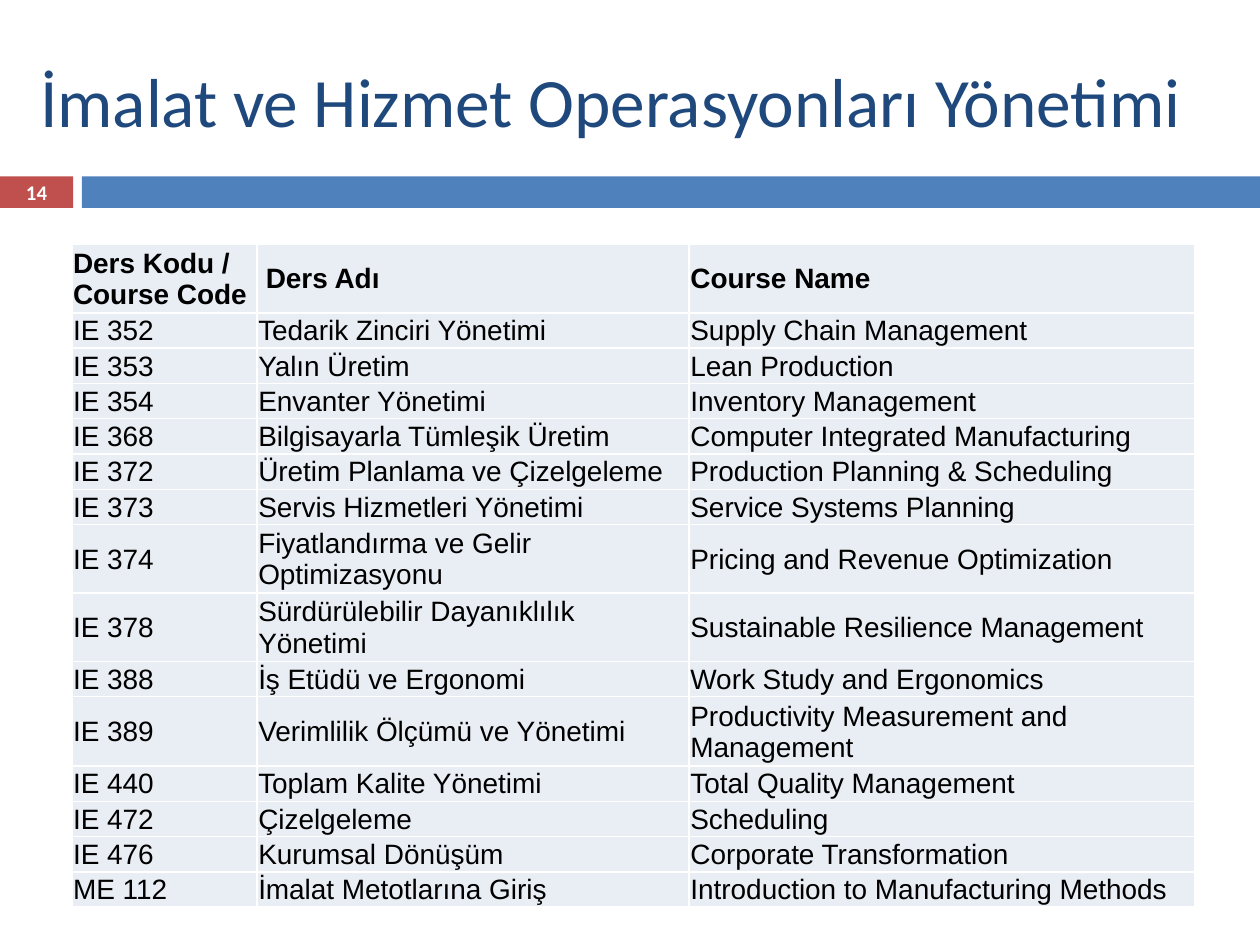
from lxml import etree
from pptx import Presentation, util as u
from pptx.dml.color import RGBColor
from pptx.enum import shapes, text
from pptx.oxml.ns import qn

TITLE = "İmalat ve Hizmet Operasyonları Yönetimi"
PAGE_NUMBER = "14"
HEADER = ("Ders Kodu / Course Code", "Ders Adı", "Course Name")
COURSES = [
    ("IE 352", "Tedarik Zinciri Yönetimi", "Supply Chain Management"),
    ("IE 353", "Yalın Üretim", "Lean Production"),
    ("IE 354", "Envanter Yönetimi", "Inventory Management"),
    ("IE 368", "Bilgisayarla Tümleşik Üretim", "Computer Integrated Manufacturing"),
    ("IE 372", "Üretim Planlama ve Çizelgeleme", "Production Planning & Scheduling"),
    ("IE 373", "Servis Hizmetleri Yönetimi", "Service Systems Planning"),
    ("IE 374", "Fiyatlandırma ve Gelir Optimizasyonu", "Pricing and Revenue Optimization"),
    ("IE 378", "Sürdürülebilir Dayanıklılık Yönetimi", "Sustainable Resilience Management"),
    ("IE 388", "İş Etüdü ve Ergonomi", "Work Study and Ergonomics"),
    ("IE 389", "Verimlilik Ölçümü ve Yönetimi", "Productivity Measurement and Management"),
    ("IE 440", "Toplam Kalite Yönetimi", "Total Quality Management"),
    ("IE 472", "Çizelgeleme", "Scheduling"),
    ("IE 476", "Kurumsal Dönüşüm", "Corporate Transformation"),
    ("ME 112", "İmalat Metotlarına Giriş", "Introduction to Manufacturing Methods"),
]
COLUMN_WIDTHS = (1.47, 3.43, 4.01)
ROW_HEIGHT = 0.28
TALL_ROWS = {0: 0.51, 7: 0.5, 8: 0.5, 10: 0.55}  # rows whose text takes two lines
WIDTH, HEIGHT = 10, 7.5
BAR_TOP, BAR_HEIGHT, BADGE_WIDTH, BAR_LEFT = 1.4, 0.25, 0.58, 0.65


def color(value):
    return RGBColor.from_string(value)


def style(paragraph, font_name, size, font_color, bold=False):
    font = paragraph.font
    font.name, font.size, font.bold = font_name, u.Pt(size), bold
    font.color.rgb = color(font_color)


def add_bar(slide, left, width, fill):
    bar = slide.shapes.add_shape(
        shapes.MSO_SHAPE.RECTANGLE, *map(u.Inches, (left, BAR_TOP, width, BAR_HEIGHT)))
    bar.shadow.inherit = False
    bar.fill.solid()
    bar.fill.fore_color.rgb = color(fill)
    bar.line.fill.background()
    return bar


def add_borders(cell, line_color, points):
    properties = cell._tc.get_or_add_tcPr()
    for position, side in enumerate(("a:lnL", "a:lnR", "a:lnT", "a:lnB")):
        line = etree.Element(qn(side), w=str(u.Pt(points)))
        fill = etree.SubElement(line, qn("a:solidFill"))
        etree.SubElement(fill, qn("a:srgbClr"), val=line_color)
        properties.insert(position, line)


presentation = Presentation()
presentation.slide_width, presentation.slide_height = u.Inches(WIDTH), u.Inches(HEIGHT)
slide = presentation.slides.add_slide(presentation.slide_layouts[6])

# Page number badge and divider bar
badge = add_bar(slide, 0, BADGE_WIDTH, "C0504D")
add_bar(slide, BAR_LEFT, WIDTH - BAR_LEFT, "4F81BD")
frame = badge.text_frame
frame.margin_top = frame.margin_bottom = 0
frame.vertical_anchor = text.MSO_ANCHOR.MIDDLE
frame.text = PAGE_NUMBER
frame.paragraphs[0].alignment = text.PP_ALIGN.CENTER
style(frame.paragraphs[0], "Calibri", 11.9, "FFFFFF", bold=True)

# Title
title = slide.shapes.add_textbox(*map(u.Inches, (0.22, 0.25, 9.59, 1.08)))
title.text_frame.word_wrap = True
title.text_frame.vertical_anchor = text.MSO_ANCHOR.MIDDLE
title.text_frame.text = TITLE
style(title.text_frame.paragraphs[0], "Calibri", 39.6, "1F497D")

# Course table
rows = [HEADER] + COURSES
heights = [TALL_ROWS.get(index, ROW_HEIGHT) for index in range(len(rows))]
table = slide.shapes.add_table(
    len(rows), len(HEADER),
    *map(u.Inches, (0.57, 1.94, sum(COLUMN_WIDTHS), sum(heights)))).table
table.horz_banding = False
for column, width in zip(table.columns, COLUMN_WIDTHS):
    column.width = u.Inches(width)
for row_index, (row, height) in enumerate(zip(rows, heights)):
    table.rows[row_index].height = u.Inches(height)
    for column_index, content in enumerate(row):
        cell = table.cell(row_index, column_index)
        cell.margin_left = cell.margin_right = cell.margin_top = u.Inches(0.01)
        cell.margin_bottom = 0
        cell.vertical_anchor = text.MSO_ANCHOR.MIDDLE
        cell.fill.solid()
        cell.fill.fore_color.rgb = color("E9EDF4")
        add_borders(cell, "FFFFFF", 1)
        cell.text = content
        style(cell.text_frame.paragraphs[0], "Arial", 16, "000000", bold=row_index == 0)
table.cell(0, 1).margin_left = u.Inches(0.07)  # this heading is set in slightly

presentation.save("out.pptx")
